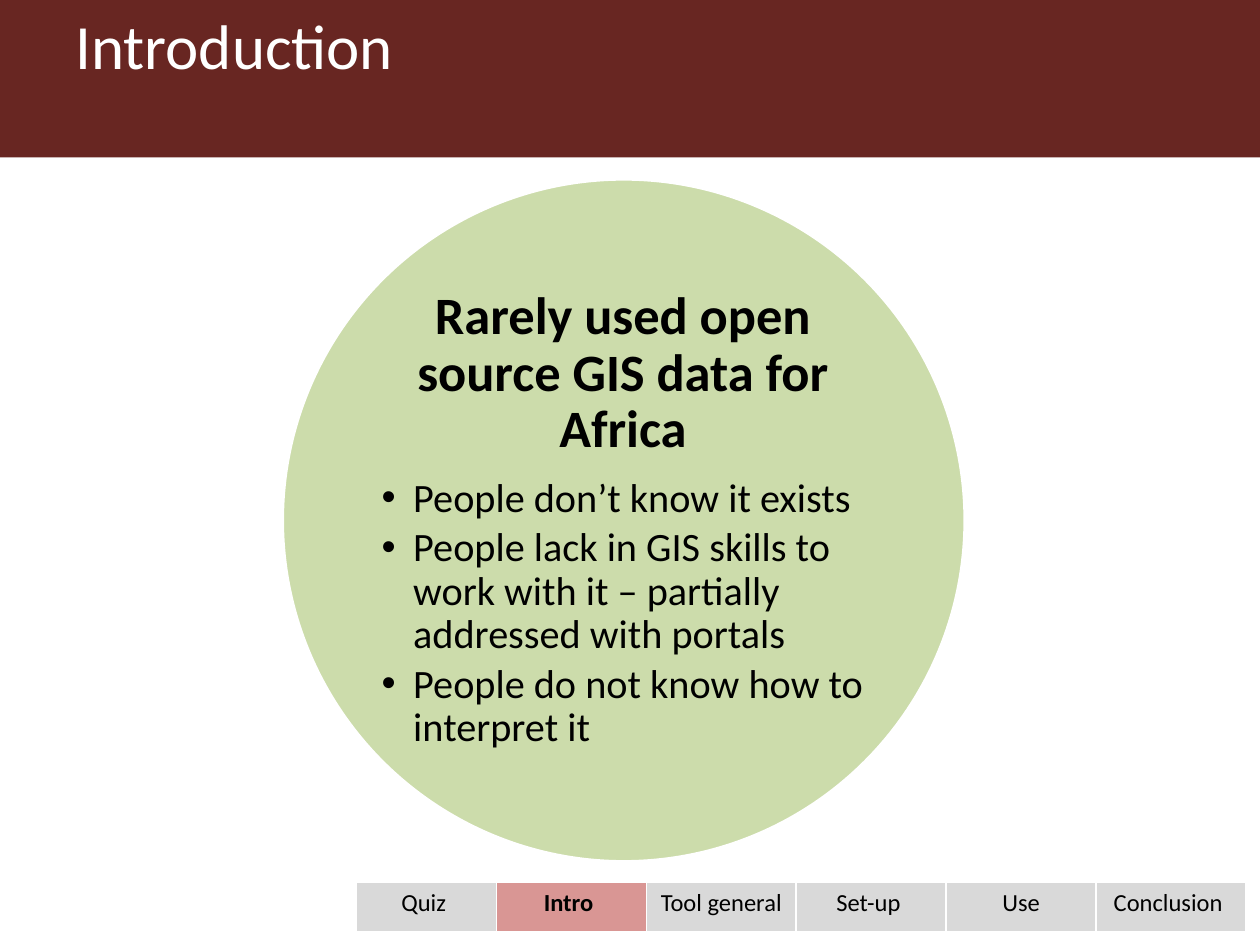
from dataclasses import dataclass

from lxml import etree
from pptx import Presentation
from pptx.dml.color import RGBColor
from pptx.enum.shapes import MSO_SHAPE
from pptx.enum.text import MSO_ANCHOR, PP_ALIGN
from pptx.oxml.ns import qn
from pptx.util import Inches, Pt

RECT, OVAL = MSO_SHAPE.RECTANGLE, MSO_SHAPE.OVAL
TOP, MIDDLE = MSO_ANCHOR.TOP, MSO_ANCHOR.MIDDLE
LEFT, CENTER = PP_ALIGN.LEFT, PP_ALIGN.CENTER


@dataclass(frozen=True)
class Theme:
    font: str = "Calibri"
    banner: str = "682622"
    circle: str = "9BBB59"
    tab: str = "D9D9D9"
    active: str = "D99694"
    white: str = "FFFFFF"
    black: str = "000000"
    title: int = 36
    heading: int = 30
    body: int = 23
    nav: int = 14


THEME = Theme()
TITLE = "Introduction"
HEADING = "Rarely used open source GIS data for Africa"
REASONS = [
    "People don’t know it exists",
    "People lack in GIS skills to work with it – partially addressed with portals",
    "People do not know how to interpret it",
]
SECTIONS = ["Quiz ", "Intro ", "Tool general", "Set-up ", "Use", "Conclusion "]
CURRENT = 1
BORDERS = {"a:lnL": 1, "a:lnR": 1, "a:lnT": 1, "a:lnB": 3}


def add_node(parent, tag, **attrs):
    return etree.SubElement(parent, qn(tag), attrs)


def apply(obj, values):
    for name, value in values.items():
        setattr(obj, name, value)


def write(p, text, size, color=THEME.black, bold=False, **layout):
    apply(p, layout)
    r = p.add_run()
    r.text = text
    apply(r.font, {"name": THEME.font, "size": Pt(size), "bold": bold})
    r.font.color.rgb = RGBColor.from_string(color)


def add_bullet(p, indent):
    pPr = p._p.get_or_add_pPr()
    pPr.set("marL", str(indent))
    pPr.set("indent", str(-indent))
    add_node(pPr, "a:buFont", typeface="Arial")
    add_node(pPr, "a:buChar", char="•")


def add_shape(s, kind, box, color):
    sp = s.shapes.add_shape(kind, *map(Inches, box))
    sp.shadow.inherit = False
    sp.fill.solid()
    sp.fill.fore_color.rgb = RGBColor.from_string(color)
    sp.line.fill.background()
    return sp


def add_text_frame(s, box, anchor, **margins):
    tf = s.shapes.add_textbox(*map(Inches, box)).text_frame
    apply(tf, {"word_wrap": True, "vertical_anchor": anchor, **margins})
    return tf


def add_banner(s):
    add_shape(s, RECT, (0, 0, 10, 1.25), THEME.banner)
    tf = add_text_frame(s, (0.5, 0, 9, 1.25), TOP)
    write(tf.paragraphs[0], TITLE, THEME.title, THEME.white, alignment=LEFT)


def add_circle(s):
    sp = add_shape(s, OVAL, (2.24, 1.42, 5.42, 5.42), THEME.circle)
    sp.line.color.rgb = RGBColor.from_string(THEME.white)
    sp.line.width = Pt(2)
    fill = sp._element.spPr.find(qn("a:solidFill"))
    add_node(fill[0], "a:alpha", val="50000")

    tf = add_text_frame(s, (3.03, 2.21, 3.83, 3.83), MIDDLE, margin_left=0,
                        margin_right=0, margin_top=0, margin_bottom=0)
    write(tf.paragraphs[0], HEADING, THEME.heading, bold=True,
          alignment=CENTER, line_spacing=0.9, space_after=Pt(10.5))
    for reason in REASONS:
        p = tf.add_paragraph()
        add_bullet(p, Inches(0.25))
        write(p, reason, THEME.body, level=1, alignment=LEFT,
              line_spacing=0.9, space_after=Pt(3.5))


def add_borders(cell):
    tcPr = cell._tc.get_or_add_tcPr()
    for tag, width in BORDERS.items():
        ln = add_node(tcPr, tag, w=str(Pt(width)))
        add_node(add_node(ln, "a:solidFill"), "a:srgbClr", val=THEME.white)


def add_navigation(s):
    frame = s.shapes.add_table(1, len(SECTIONS), Inches(2.83), Inches(7),
                               Inches(7.06), Inches(0.41))
    table = frame.table
    apply(table, {"first_row": False, "horz_banding": False})
    for i, section in enumerate(SECTIONS):
        active = i == CURRENT
        table.columns[i].width = Inches(1.19 if i else 1.11)
        cell = table.cell(0, i)
        add_borders(cell)
        cell.fill.solid()
        color = THEME.active if active else THEME.tab
        cell.fill.fore_color.rgb = RGBColor.from_string(color)
        write(cell.text_frame.paragraphs[0], section, THEME.nav,
              bold=active, alignment=CENTER)


def main():
    prs = Presentation()
    apply(prs, {"slide_width": Inches(10), "slide_height": Inches(7.5)})
    s = prs.slides.add_slide(prs.slide_layouts[6])
    add_banner(s)
    add_circle(s)
    add_navigation(s)
    prs.save("out.pptx")


if __name__ == "__main__":
    main()
